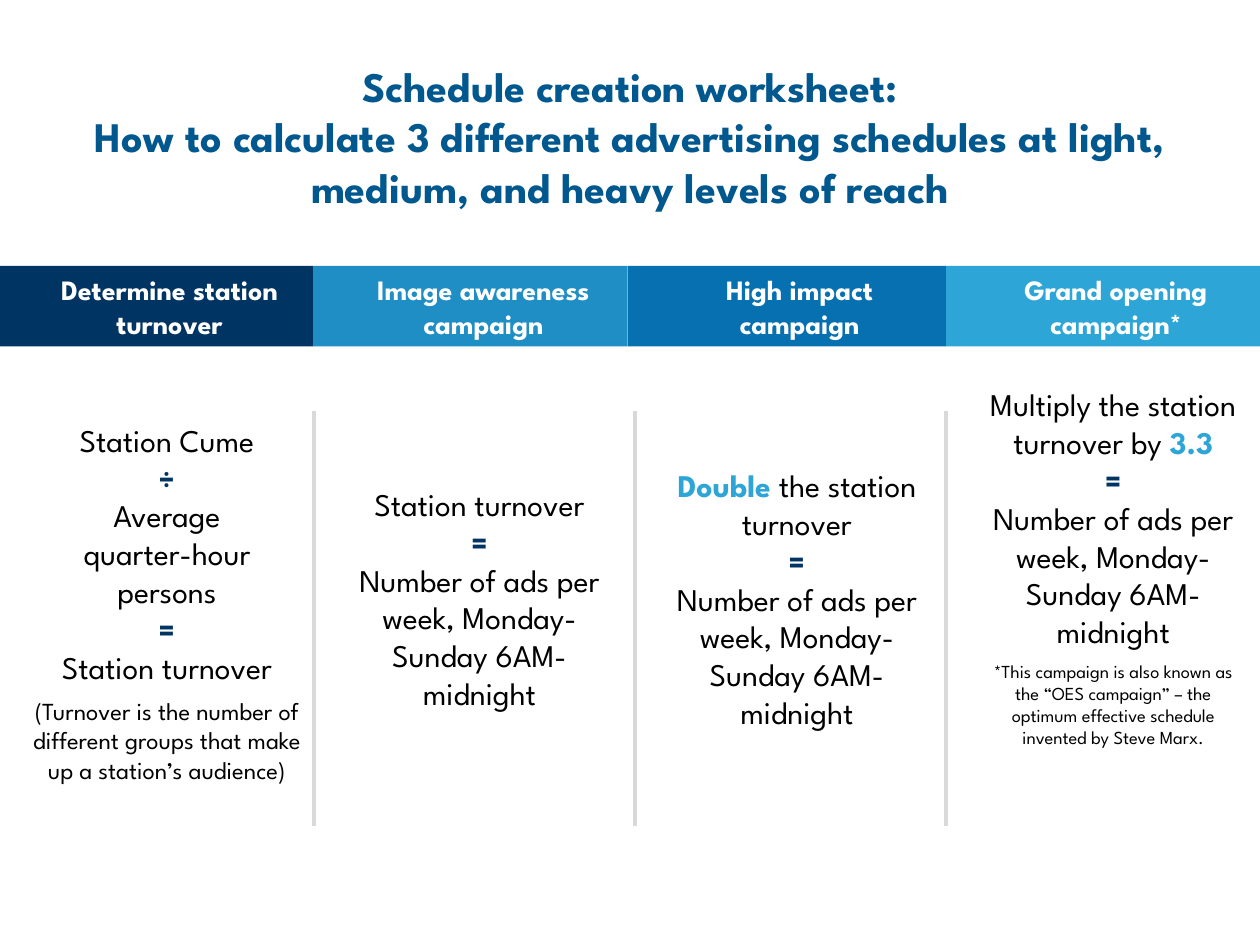
from collections import namedtuple
from itertools import pairwise

from pptx import Presentation
from pptx import util as u
from pptx.dml import color
from pptx.enum import shapes, text
from pptx.oxml import xmlchemy

Box = namedtuple("Box", "left top width height")
Style = namedtuple("Style", "size color bold after")

FONT = "League Spartan"
COLORS = {
    "title": "01588E", "navy": "003463", "sky": "1F8EC5", "blue": "0770B1",
    "light": "2DA5D7", "black": "000000", "white": "FFFFFF", "rule": "D9D9D9",
}
STYLES = {
    "title": Style(24, "title", True, 0),
    "header": Style(16, "white", True, 0),
    "step": Style(18, "black", False, 0),
    "sign": Style(18, "navy", True, 0),
    "result": Style(18, "black", False, 6),
    "note": Style(14, "black", False, 6),
    "footnote": Style(10.5, "black", False, 6),
}
TITLE = ("Schedule creation worksheet:\vHow to calculate 3 different advertising "
         "schedules at light, medium, and heavy levels of reach")
ADS = "Number of ads per week, Monday-Sunday 6AM-midnight"
EDGES = [0, 179.3, 358.6, 540.7, 720]
RULES = [179.3, 362.9, 540.7]
HEADERS = [
    ("Determine station turnover", "navy"),
    ("Image awareness campaign", "sky"),
    ("High impact campaign", "blue"),
    ("Grand opening campaign*", "light"),
]
COLUMNS = [
    (Box(11.5, 236.9, 167.8, 234), [
        ("step", "Station Cume"),
        ("sign", "÷"),
        ("step", "Average"),
        ("step", "quarter-hour persons"),
        ("sign", "="),
        ("result", "Station turnover"),
        ("note", "(Turnover is the number of different groups that make up "
                 "a station’s audience)"),
    ]),
    (Box(197.3, 273.6, 153.4, 159.8), [
        ("step", "Station turnover"),
        ("sign", "="),
        ("step", ADS),
    ]),
    (Box(378.7, 262.8, 153.4, 181.4), [
        ("step", "*Double* the station turnover"),
        ("sign", "="),
        ("step", ADS),
    ]),
    (Box(557.3, 216.7, 157.7, 273.6), [
        ("step", "Multiply the station turnover by *3.3*"),
        ("sign", "="),
        ("result", ADS),
        ("footnote", "*This campaign is also known as the “OES campaign” – the "
                     "optimum effective schedule invented by Steve Marx."),
    ]),
]


def rgb(name):
    return color.RGBColor.from_string(COLORS[name])


def points(box):
    return [u.Pt(length) for length in box]


def format_paragraph(para, style):
    para.alignment = text.PP_ALIGN.CENTER
    para.space_after = u.Pt(style.after)
    para.font.name = FONT
    para.font.size = u.Pt(style.size)
    para.font.bold = style.bold
    para.font.color.rgb = rgb(style.color)


def set_up_frame(frame, anchor=text.MSO_ANCHOR.TOP):
    frame.word_wrap = True
    frame.auto_size = text.MSO_AUTO_SIZE.SHAPE_TO_FIT_TEXT
    frame.vertical_anchor = anchor


def add_title(page, box):
    title = page.shapes.title
    title.left, title.top, title.width, title.height = points(box)
    title.text_frame.text = TITLE
    set_up_frame(title.text_frame)
    format_paragraph(title.text_frame.paragraphs[0], STYLES["title"])


def add_header_band(page, box):
    for (left, right), (label, fill) in zip(pairwise(EDGES), HEADERS):
        cell = page.shapes.add_shape(
            shapes.MSO_SHAPE.RECTANGLE,
            *points(Box(box.left + left, box.top, right - left, box.height)))
        cell.shadow.inherit = False
        cell.fill.solid()
        cell.fill.fore_color.rgb = rgb(fill)
        cell.line.fill.background()
        frame = cell.text_frame
        frame.text = label
        set_up_frame(frame, text.MSO_ANCHOR.MIDDLE)
        frame.margin_left = u.Pt(21.6)
        format_paragraph(frame.paragraphs[0], STYLES["header"])


def add_column(page, box, lines):
    frame = page.shapes.add_textbox(*points(box)).text_frame
    set_up_frame(frame)
    for index, (kind, line) in enumerate(lines):
        para = frame.add_paragraph() if index else frame.paragraphs[0]
        format_paragraph(para, STYLES[kind])
        parts = line.split("*") if kind == "step" else [line]
        for number, part in enumerate(parts):
            if part:
                span = para.add_run()
                span.text = part
                if number % 2:
                    span.font.bold = True
                    span.font.color.rgb = rgb("light")


def add_dividers(page, box):
    for offset in RULES:
        x = u.Pt(box.left + offset)
        divider = page.shapes.add_connector(
            shapes.MSO_CONNECTOR.STRAIGHT,
            x, u.Pt(box.top), x, u.Pt(box.top + box.height))
        divider.line.color.rgb = rgb("rule")
        divider.line.width = u.Pt(2)
        properties = divider.line._get_or_add_ln().getparent()
        properties.append(xmlchemy.OxmlElement("a:effectLst"))


def main():
    deck = Presentation()
    deck.slide_width, deck.slide_height = u.Pt(720), u.Pt(540)
    page = deck.slides.add_slide(deck.slide_layouts[5])
    add_title(page, Box(0, 31, 720, 94.3))
    for box, lines in COLUMNS:
        add_column(page, box, lines)
    add_header_band(page, Box(0, 151.9, 720, 46.1))
    add_dividers(page, Box(0, 234.7, 720, 237.6))
    deck.save("out.pptx")


if __name__ == "__main__":
    main()
